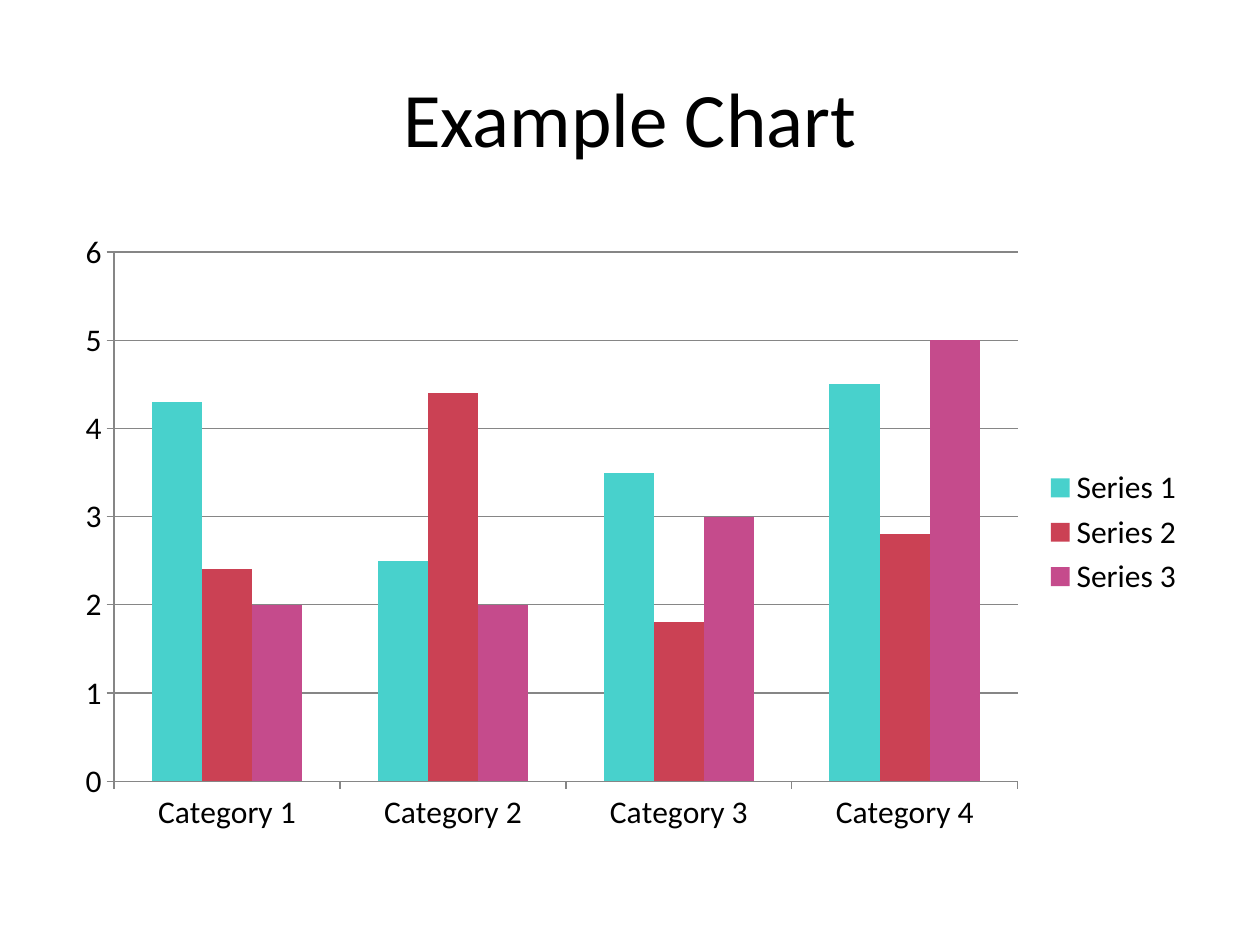
from pptx import Presentation
from pptx.chart.data import CategoryChartData
from pptx.dml.color import RGBColor
from pptx.enum.chart import XL_CHART_TYPE, XL_LEGEND_POSITION, XL_TICK_MARK
from pptx.enum.text import MSO_ANCHOR, PP_ALIGN
from pptx.util import Inches, Pt

COLORS = {
    "text": "000000",
    "line": "868686",
    "Series 1": "48D1CC",
    "Series 2": "CB4154",
    "Series 3": "C54B8C",
}
CATEGORIES = ["Category 1", "Category 2", "Category 3", "Category 4"]
SERIES = {
    "Series 1": (4.3, 2.5, 3.5, 4.5),
    "Series 2": (2.4, 4.4, 1.8, 2.8),
    "Series 3": (2, 2, 3, 5),
}


def color(name):
    """Return the named colour."""
    return RGBColor.from_string(COLORS[name])


def set_attrs(obj, **values):
    """Set each given attribute on an object."""
    for name, value in values.items():
        setattr(obj, name, value)


def style_font(font, size):
    """Apply the slide's typeface and text colour."""
    set_attrs(font, name="Calibri", size=Pt(size), bold=False)
    font.color.rgb = color("text")


def style_line(line):
    """Give an axis or gridline its thin grey stroke."""
    line.width = Pt(0.75)
    line.color.rgb = color("line")


def add_title(s, text, left, top, width, height):
    """Add the centred slide title."""
    tf = s.shapes.add_textbox(
        Inches(left), Inches(top), Inches(width), Inches(height)
    ).text_frame
    set_attrs(tf, word_wrap=True, vertical_anchor=MSO_ANCHOR.MIDDLE)
    p = tf.paragraphs[0]
    p.alignment = PP_ALIGN.CENTER
    r = p.add_run()
    r.text = text
    style_font(r.font, 44)


def add_column_chart(s, left, top, width, height):
    """Add the clustered column chart with its legend."""
    data = CategoryChartData()
    data.categories = CATEGORIES
    for name, values in SERIES.items():
        data.add_series(name, values)
    chart = s.shapes.add_chart(
        XL_CHART_TYPE.COLUMN_CLUSTERED,
        Inches(left), Inches(top), Inches(width), Inches(height), data,
    ).chart
    set_attrs(chart, has_title=False, has_legend=True)
    style_font(chart.font, 18)
    set_attrs(chart.legend, position=XL_LEGEND_POSITION.RIGHT,
              include_in_layout=False)

    for axis in (chart.category_axis, chart.value_axis):
        set_attrs(axis, major_tick_mark=XL_TICK_MARK.OUTSIDE,
                  minor_tick_mark=XL_TICK_MARK.NONE)
        style_line(axis.format.line)
    set_attrs(chart.value_axis, has_major_gridlines=True,
              minimum_scale=0, maximum_scale=6, major_unit=1)
    style_line(chart.value_axis.major_gridlines.format.line)

    plot = chart.plots[0]
    set_attrs(plot, gap_width=150, overlap=0, vary_by_categories=False)
    for series in plot.series:
        series.format.fill.solid()
        series.format.fill.fore_color.rgb = color(series.name)


def main():
    """Build and save the slide."""
    prs = Presentation()
    set_attrs(prs, slide_width=Inches(10), slide_height=Inches(7.5))
    s = prs.slides.add_slide(prs.slide_layouts[6])
    add_title(s, "Example Chart", 0.5, 0.3, 9, 1.25)
    add_column_chart(s, 0.5, 1.75, 9, 4.95)
    prs.save("out.pptx")


if __name__ == "__main__":
    main()
